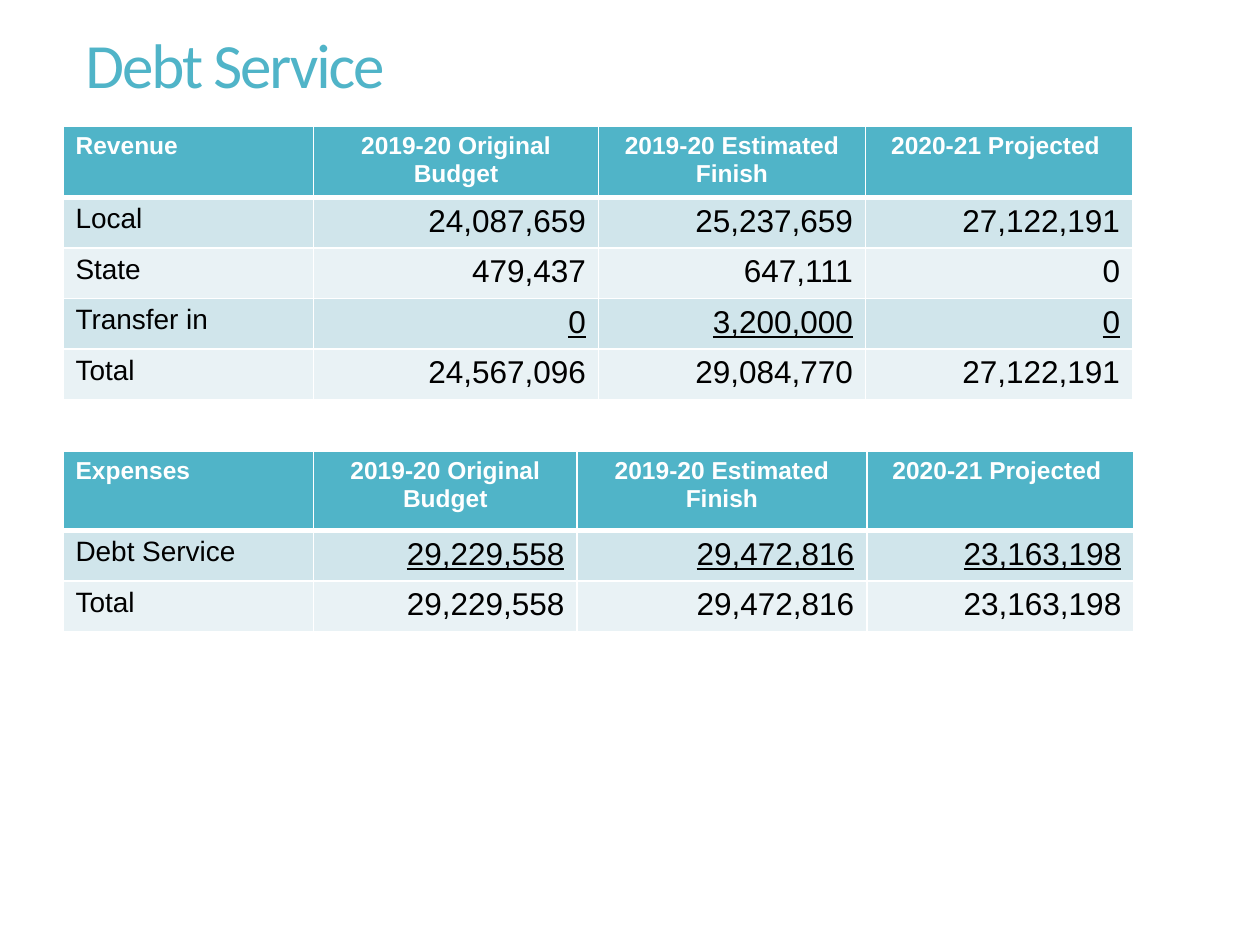
from lxml.etree import SubElement
from pptx import Presentation
from pptx.dml.color import RGBColor
from pptx.enum.text import MSO_ANCHOR, PP_ALIGN
from pptx.oxml.ns import qn
from pptx.util import Inches, Pt

COLORS = {"teal": "50B4C8", "band": "D0E5EB", "light": "E9F2F5",
          "white": "FFFFFF", "black": "000000"}
TITLE = "Debt Service"
PERIODS = ["2019-20 Original Budget", "2019-20 Estimated Finish", "2020-21 Projected "]
TABLES = [
    {
        "top": 1, "height": 2.17, "header_height": 0.36,
        "widths": [1.99, 2.26, 2.12, 2.12],
        "rows": [
            ["Revenue", *PERIODS],
            ["Local", "24,087,659", "25,237,659", "27,122,191"],
            ["State", "479,437", "647,111", "0"],
            ["Transfer in", "0", "3,200,000", "0"],
            ["Total", "24,567,096", "29,084,770", "27,122,191"],
        ],
    },
    {
        "top": 3.58, "height": 1.43, "header_height": 0.63,
        "widths": [1.99, 2.09, 2.3, 2.12],
        "rows": [
            ["Expenses", *PERIODS],
            ["Debt Service", "29,229,558", "29,472,816", "23,163,198"],
            ["Total", "29,229,558", "29,472,816", "23,163,198"],
        ],
    },
]
TABLE_LEFT = 0.5
ROW_HEIGHT = 0.36
HEADER = {"size": Pt(14), "bold": True}
LABEL = {"size": Pt(16), "bold": False}
AMOUNT = {"size": Pt(18), "bold": False}


def rgb(name):
    return RGBColor.from_string(COLORS[name])


def write(paragraph, text, color, formats, align=PP_ALIGN.LEFT):
    paragraph.alignment = align
    run = paragraph.add_run()
    run.text = text
    run.font.color.rgb = rgb(color)
    for name, value in formats.items():
        setattr(run.font, name, value)
    return run


def set_borders(cell, row):
    """Draw white borders, with a thick line between header and body."""
    widths = {"lnL": 1, "lnR": 1, "lnT": 3 if row == 1 else 1, "lnB": 3 if row == 0 else 1}
    properties = cell._tc.get_or_add_tcPr()
    for tag, width in widths.items():
        line = SubElement(properties, qn(f"a:{tag}"), w=str(Pt(width)))
        SubElement(SubElement(line, qn("a:solidFill")), qn("a:srgbClr"), val=COLORS["white"])


def fill_cell(cell, text, row, column, row_count):
    set_borders(cell, row)
    cell.fill.solid()
    if row == 0:
        fill, color, formats = "teal", "white", HEADER
        align = PP_ALIGN.CENTER if column else PP_ALIGN.LEFT
    else:
        fill, color = "band" if row % 2 else "light", "black"
        formats = AMOUNT if column else LABEL
        align = PP_ALIGN.RIGHT if column else PP_ALIGN.LEFT
    cell.fill.fore_color.rgb = rgb(fill)
    last_before_total = row == row_count - 2
    formats = {**formats, "name": "Arial", "underline": bool(column) and last_before_total}
    write(cell.text_frame.paragraphs[0], text, color, formats, align)


def add_budget_table(slide, data):
    rows, widths = data["rows"], data["widths"]
    table = slide.shapes.add_table(
        len(rows), len(widths), Inches(TABLE_LEFT), Inches(data["top"]),
        Inches(sum(widths)), Inches(data["height"])).table
    for column, width in zip(table.columns, widths):
        column.width = Inches(width)
    for index, values in enumerate(rows):
        table.rows[index].height = Inches(ROW_HEIGHT if index else data["header_height"])
        for column, text in enumerate(values):
            fill_cell(table.cell(index, column), text, index, column, len(rows))


def add_title(slide):
    box = slide.shapes.add_textbox(Inches(0.58), Inches(0.08), Inches(8.95), Inches(0.92))
    frame = box.text_frame
    frame.word_wrap = True
    frame.vertical_anchor = MSO_ANCHOR.MIDDLE
    paragraph = frame.paragraphs[0]
    paragraph.line_spacing = 0.9
    run = write(paragraph, TITLE, "teal", {"name": "Calibri", "size": Pt(36)})
    run.font._element.set("spc", "-120")


def main():
    presentation = Presentation()
    presentation.slide_width, presentation.slide_height = Inches(10), Inches(7.5)
    slide = presentation.slides.add_slide(presentation.slide_layouts[6])
    add_title(slide)
    for data in TABLES:
        add_budget_table(slide, data)
    presentation.save("out.pptx")


if __name__ == "__main__":
    main()
